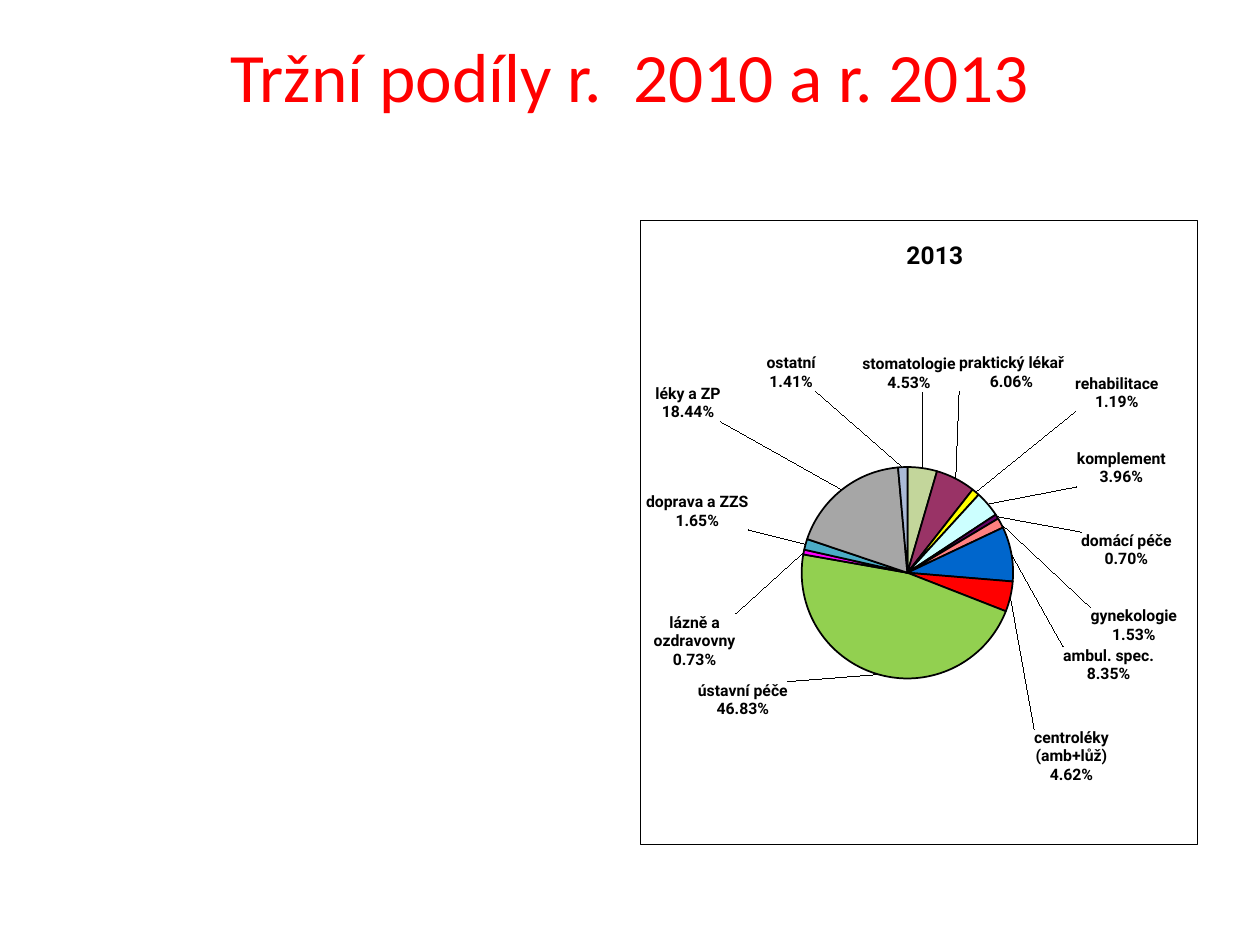
from copy import deepcopy
from math import cos, pi, sin
from pptx import Presentation
from pptx.chart.data import CategoryChartData as Data
from pptx.dml.color import RGBColor as RGB
from pptx.enum.chart import XL_CHART_TYPE as Kind, XL_LABEL_POSITION as Place
from pptx.enum.text import MSO_ANCHOR as Anchor, PP_ALIGN as Align
from pptx.oxml import parse_xml
from pptx.oxml.ns import nsdecls, qn
from pptx.util import Inches, Pt

RED = RGB(0xFF, 0x00, 0x00)
BLACK = RGB(0x00, 0x00, 0x00)
TEXT = {"name": "Roboto", "color": BLACK, "bold": True}
HIGH, WIDE = 4.95, 4.42
PLOT = {"x": 0.29, "y": 0.3, "w": 0.38, "h": 0.53}
MID_X, MID_Y, RING = 0.48, 0.56, 0.9

SLICES = [
    ("stomatologie", 4.53, RGB(0xC3, 0xD6, 0x9B), 0.48, 0.24, 0.17, 2),
    ("praktický lékař", 6.06, RGB(0x99, 0x33, 0x66), 0.67, 0.24, 0.19, 2),
    ("rehabilitace", 1.19, RGB(0xFF, 0xFF, 0x00), 0.86, 0.27, 0.15, 2),
    ("komplement", 3.96, RGB(0xCC, 0xFF, 0xFF), 0.86, 0.39, 0.16, 2),
    ("domácí péče", 0.7, RGB(0x66, 0x00, 0x66), 0.87, 0.52, 0.16, 2),
    ("gynekologie", 1.53, RGB(0xFF, 0x80, 0x80), 0.89, 0.64, 0.16, 2),
    ("ambul. spec.", 8.35, RGB(0x00, 0x66, 0xCC), 0.84, 0.71, 0.16, 2),
    ("centroléky (amb+lůž)", 4.62, RED, 0.77, 0.86, 0.13, 3),
    ("ústavní péče", 46.83, RGB(0x92, 0xD0, 0x50), 0.18, 0.77, 0.16, 2),
    ("lázně a ozdravovny", 0.73, RGB(0xFF, 0x00, 0xFF), 0.1, 0.67, 0.15, 3),
    ("doprava a ZZS", 1.65, RGB(0x4B, 0xAC, 0xC6), 0.1, 0.46, 0.18, 2),
    ("léky a ZP", 18.44, RGB(0xA6, 0xA6, 0xA6), 0.08, 0.29, 0.12, 2),
    ("ostatní", 1.41, RGB(0xAA, 0xBA, 0xD7), 0.23, 0.24, 0.09, 2),
]


def style(item, vals):
    for key, val in vals.items():
        if key == "color":
            item.color.rgb = val
        else:
            setattr(item, key, val)


def layout(vals, inner=False):
    modes = {"x": "edge", "y": "edge"} if inner else {}
    tags = '<c:layoutTarget val="inner"/>' if "w" in vals else ""
    tags += "".join(f'<c:{k}Mode val="{v}"/>' for k, v in modes.items())
    tags += "".join(f'<c:{k} val="{v:.2f}"/>' for k, v in vals.items())
    return parse_xml(f'<c:layout {nsdecls("c")}><c:manualLayout>{tags}</c:manualLayout></c:layout>')


deck = Presentation()
style(deck, {"slide_width": Inches(10), "slide_height": Inches(7.5)})
W = deck.slide_width
slide = deck.slides.add_slide(deck.slide_layouts[6])

box = slide.shapes.add_textbox(int(W * 0.05), Inches(0.26), int(W * 0.9), Inches(1.25))
frame = box.text_frame
style(frame, {"word_wrap": True, "vertical_anchor": Anchor.TOP, "margin_top": 0})
style(frame.paragraphs[0], {"text": "Tržní podíly r.  2010 a r. 2013", "alignment": Align.CENTER})
style(frame.paragraphs[0].runs[0].font, {"name": "Calibri", "size": Pt(39.6), "color": RED})

data = Data(number_format="0.00")
data.categories = [row[0] for row in SLICES]
data.add_series("Series 1", [row[1] for row in SLICES])
chart = slide.shapes.add_chart(
    Kind.PIE, Inches(5.08), Inches(1.75), Inches(WIDE), Inches(HIGH), data).chart
style(chart, {"has_legend": False, "has_title": True})
style(chart.font, {"name": "Roboto", "size": Pt(12), "color": BLACK})
chart.font._element.getparent().getparent().getparent().addprevious(parse_xml(
    f'<c:spPr {nsdecls("c", "a")}><a:solidFill><a:srgbClr val="FFFFFF"/></a:solidFill>'
    '<a:ln w="3175"><a:solidFill><a:srgbClr val="000000"/></a:solidFill></a:ln></c:spPr>'))

title = chart.chart_title
title.text_frame.text = "2013"
style(title.text_frame.paragraphs[0].runs[0].font, {**TEXT, "size": Pt(14)})
for old in title._element.findall(qn("c:layout")):
    title._element.remove(old)
title._element.find(qn("c:tx")).addnext(layout({"x": 0.47, "y": 0.02}, True))

plot = chart.plots[0]
plot.vary_by_categories = True
area = plot._element.getparent()
for old in area.findall(qn("c:layout")):
    area.remove(old)
area.insert(0, layout(PLOT, True))

pie = plot.series[0]
tags = pie.data_labels
style(tags, {"show_value": False, "show_category_name": True, "show_percentage": True,
             "number_format": "0.00%", "number_format_is_linked": False,
             "position": Place.OUTSIDE_END})
style(tags.font, {**TEXT, "size": Pt(9)})
root = tags._element
for old in root.findall(qn("c:showLeaderLines")):
    root.remove(old)
root.append(parse_xml(f'<c:separator {nsdecls("c")}>\n</c:separator>'))
parts = list(root)
root.append(parse_xml(f'<c:showLeaderLines {nsdecls("c")} val="1"/>'))

done = 0
for i, (name, share, color, x, y, wide, rows) in enumerate(SLICES):
    point = pie.points[i].format
    point.fill.solid()
    point.fill.fore_color.rgb = color
    style(point.line, {"color": BLACK, "width": Pt(1)})
    turn = 2 * pi * (done + share / 2) / 100
    done += share
    right, down = sin(turn), -cos(turn)
    side = 1 if right > 0 else -1
    drop = 1 if down > 0 else -1
    base_x = MID_X + RING / WIDE * right + side * wide / 2
    base_y = MID_Y + RING / HIGH * down + drop * rows * 0.015
    tag = parse_xml(f'<c:dLbl {nsdecls("c")}><c:idx val="{i}"/></c:dLbl>')
    tag.append(layout({"x": x - base_x, "y": y - base_y}))
    for part in parts:
        tag.append(deepcopy(part))
    root.insert(i, tag)

deck.save("out.pptx")
